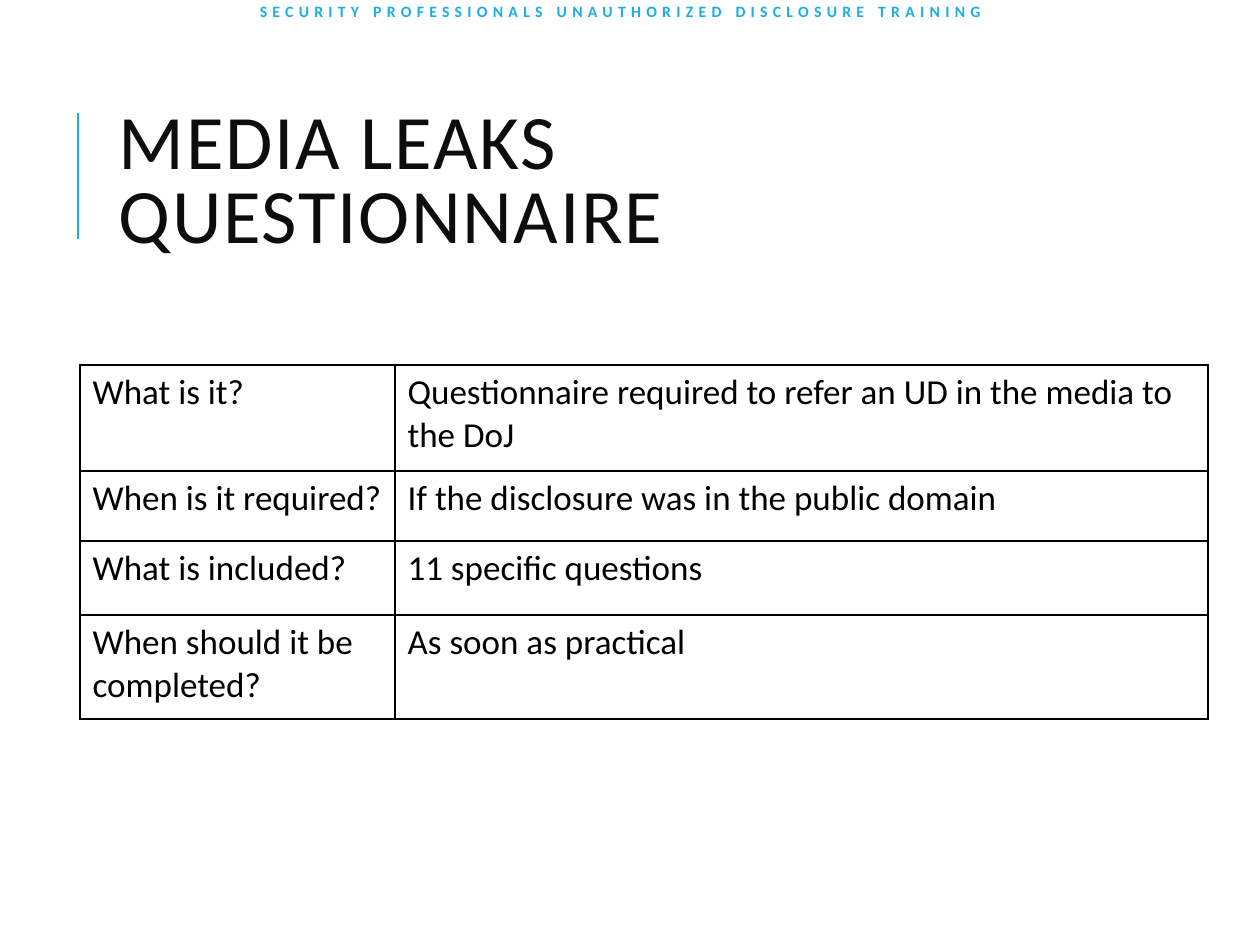
from dataclasses import dataclass

from lxml.etree import SubElement as Sub
from pptx import Presentation
from pptx.dml.color import RGBColor as Rgb
from pptx.enum.shapes import MSO_CONNECTOR as Link
from pptx.enum.text import MSO_ANCHOR as Anchor, MSO_AUTO_SIZE as Fit, PP_ALIGN as Align
from pptx.oxml.ns import qn
from pptx.util import Pt

SCALE = 914400 / 126


@dataclass(frozen=True)
class Theme:
    font: str = "Calibri"
    accent: str = "1CADE4"
    ink: str = "0D0D0D"
    black: str = "000000"
    head: int = 9
    title: int = 44
    cell: int = 20
    rule: float = 1.5
    edge: int = 1


THEME = Theme()
COLS = [315, 813]
ROWS = [
    (106, "What is it?", "Questionnaire required to refer an UD in the media to the DoJ"),
    (70, "When is it required?", "If the disclosure was in the public domain"),
    (74, "What is included?", "11 specific questions"),
    (104, "When should it be completed?", "As soon as practical"),
]


def px(*vals):
    return [round(val * SCALE) for val in vals]


def style(para, size, color, bold=False, space=0):
    for run in para.runs:
        font = run.font
        font.name, font.size, font.bold = THEME.font, Pt(size), bold
        font.color.rgb = Rgb.from_string(color)
        if space:
            font._element.set("spc", str(space * 100))


def add_rule(slide, *ends):
    line = slide.shapes.add_connector(Link.STRAIGHT, *px(*ends))
    line.line.color.rgb = Rgb.from_string(THEME.accent)
    line.line.width = Pt(THEME.rule)
    Sub(line._element.spPr, qn("a:effectLst"))


def add_head(slide, text, *box):
    frame = slide.shapes.add_textbox(*px(*box)).text_frame
    frame.word_wrap = True
    frame.vertical_anchor = Anchor.BOTTOM
    frame.margin_left = frame.margin_right = 0
    frame.margin_top = frame.margin_bottom = 0
    frame.text = text
    para = frame.paragraphs[0]
    para.alignment = Align.CENTER
    style(para, THEME.head, THEME.accent, bold=True, space=3)


def set_title(slide, text, *box):
    title = slide.shapes.title
    title.left, title.top, title.width, title.height = px(*box)
    frame = title.text_frame
    frame.auto_size = Fit.NONE
    frame.word_wrap = True
    frame.vertical_anchor = Anchor.MIDDLE
    frame.text = text
    para = frame.paragraphs[0]
    para.alignment = Align.LEFT
    para.line_spacing = 0.8
    style(para, THEME.title, THEME.ink, space=1)


def add_edges(cell):
    props = cell._tc.get_or_add_tcPr()
    for side in ("lnL", "lnR", "lnT", "lnB"):
        edge = Sub(props, qn(f"a:{side}"), w=str(Pt(THEME.edge)))
        Sub(Sub(edge, qn("a:solidFill")), qn("a:srgbClr"), val=THEME.black)


def fill_cell(cell, text):
    cell.text = text
    style(cell.text_frame.paragraphs[0], THEME.cell, THEME.black)
    add_edges(cell)
    cell.fill.background()


def add_grid(slide, left, top):
    high = sum(row[0] for row in ROWS)
    box = px(left, top, sum(COLS), high)
    grid = slide.shapes.add_table(len(ROWS), len(COLS), *box).table
    grid.first_row = grid.horz_banding = False
    for col, width in zip(grid.columns, px(*COLS)):
        col.width = width
    for line, (tall, *texts) in zip(grid.rows, ROWS):
        line.height = px(tall)[0]
        for cell, text in zip(line.cells, texts):
            fill_cell(cell, text)


def main():
    deck = Presentation()
    deck.slide_width, deck.slide_height = px(1260, 945)
    slide = deck.slides.add_slide(deck.slide_layouts[5])
    add_rule(slide, 78, 239, 78, 113)
    add_head(slide, "SECURITY PROFESSIONALS UNAUTHORIZED DISCLOSURE TRAINING", 32, 0, 1176, 21)
    set_title(slide, "MEDIA LEAKS QUESTIONNAIRE", 106, 81, 1004, 207)
    add_grid(slide, 80, 365)
    deck.save("out.pptx")


if __name__ == "__main__":
    main()
